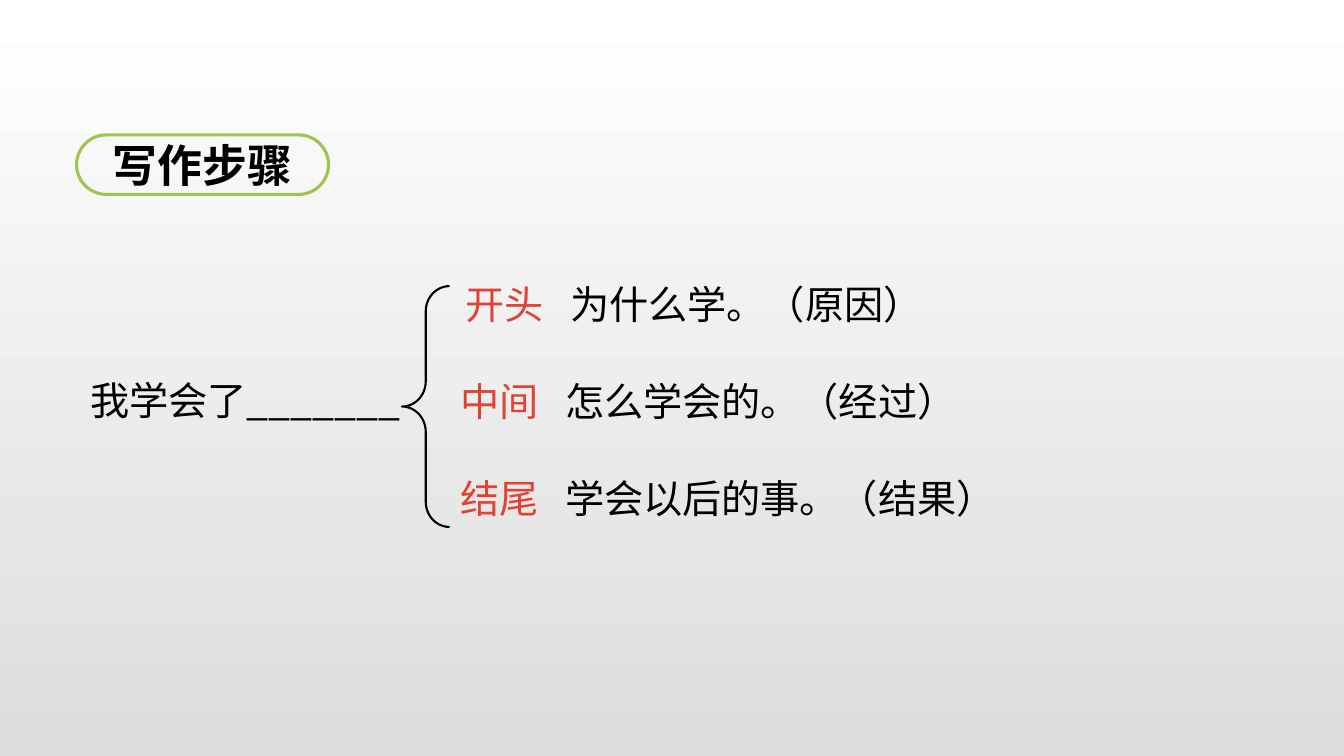
"""Build the slide on the steps for writing about something learned."""
from lxml.etree import SubElement
from pptx import Presentation
from pptx.dml.color import RGBColor
from pptx.enum.shapes import MSO_SHAPE
from pptx.enum.text import MSO_ANCHOR, PP_ALIGN
from pptx.oxml.ns import qn
from pptx.util import Cm, Pt

FONT = "Noto Sans CJK SC"
BLACK = RGBColor(0, 0, 0)
RED = RGBColor(0xE0, 0x42, 0x36)
GREEN = RGBColor(0xA1, 0xC4, 0x50)
WHITE = RGBColor(0xFF, 0xFF, 0xFF)
GREY = RGBColor(0xDC, 0xDC, 0xDC)


def add_span(paragraph, text, color, size=28, bold=False):
    span = paragraph.add_run()
    span.text = text
    span.font.size = Pt(size)
    span.font.bold = bold
    span.font.color.rgb = color
    span.font.name = FONT
    SubElement(span.font._element, qn("a:ea"), typeface=FONT)


def add_outline(kind, left, top, width, height, color, weight):
    shape = page.shapes.add_shape(kind, Cm(left), Cm(top), Cm(width), Cm(height))
    shape.shadow.inherit = False
    shape.fill.background()
    shape.line.color.rgb = color
    shape.line.width = Pt(weight)
    return shape


deck = Presentation()
deck.slide_width = Cm(33.87)
deck.slide_height = Cm(19.05)
page = deck.slides.add_slide(deck.slide_layouts[6])

backdrop = page.background.fill
backdrop.gradient()
backdrop.gradient_angle = 270
for stop, position, color in zip(backdrop.gradient_stops, (0, 1), (WHITE, GREY)):
    stop.position = position
    stop.color.rgb = color

heading = add_outline(MSO_SHAPE.ROUNDED_RECTANGLE, 1.93, 3.4, 6.35, 1.5, GREEN, 2.25)
heading.adjustments[0] = 0.5
heading.text_frame.vertical_anchor = MSO_ANCHOR.MIDDLE
title = heading.text_frame.paragraphs[0]
title.alignment = PP_ALIGN.CENTER
add_span(title, "写作步骤", BLACK, size=32, bold=True)

steps = [
    ("开头", "为什么学。（原因）", 11.48),
    ("中间", "怎么学会的。（经过）", 11.35),
    ("结尾", "学会以后的事。（结果）", 11.35),
]
for row, (label, content, left) in enumerate(steps):
    box = page.shapes.add_textbox(Cm(left), Cm(6.93 + 2.45 * row), Cm(15.3), Cm(1.45))
    box.text_frame.word_wrap = True
    step = box.text_frame.paragraphs[0]
    tabs = SubElement(step._p.get_or_add_pPr(), qn("a:tabLst"))
    SubElement(tabs, qn("a:tab"), pos=str(Cm(2.64)), algn="l")
    add_span(step, label, RED)
    add_span(step, "\t" + content, BLACK)

brace = add_outline(MSO_SHAPE.LEFT_BRACE, 10.13, 7.21, 1.2, 6.07, BLACK, 1.5)
brace.adjustments[0] = 0.53
brace.adjustments[1] = 0.5

topic_box = page.shapes.add_textbox(Cm(2.03), Cm(8.76), Cm(10.03), Cm(2.06))
topic_box.text_frame.word_wrap = True
topic = topic_box.text_frame.paragraphs[0]
topic.line_spacing = 1.5
add_span(topic, "我学会了_______", BLACK)

deck.save("out.pptx")
